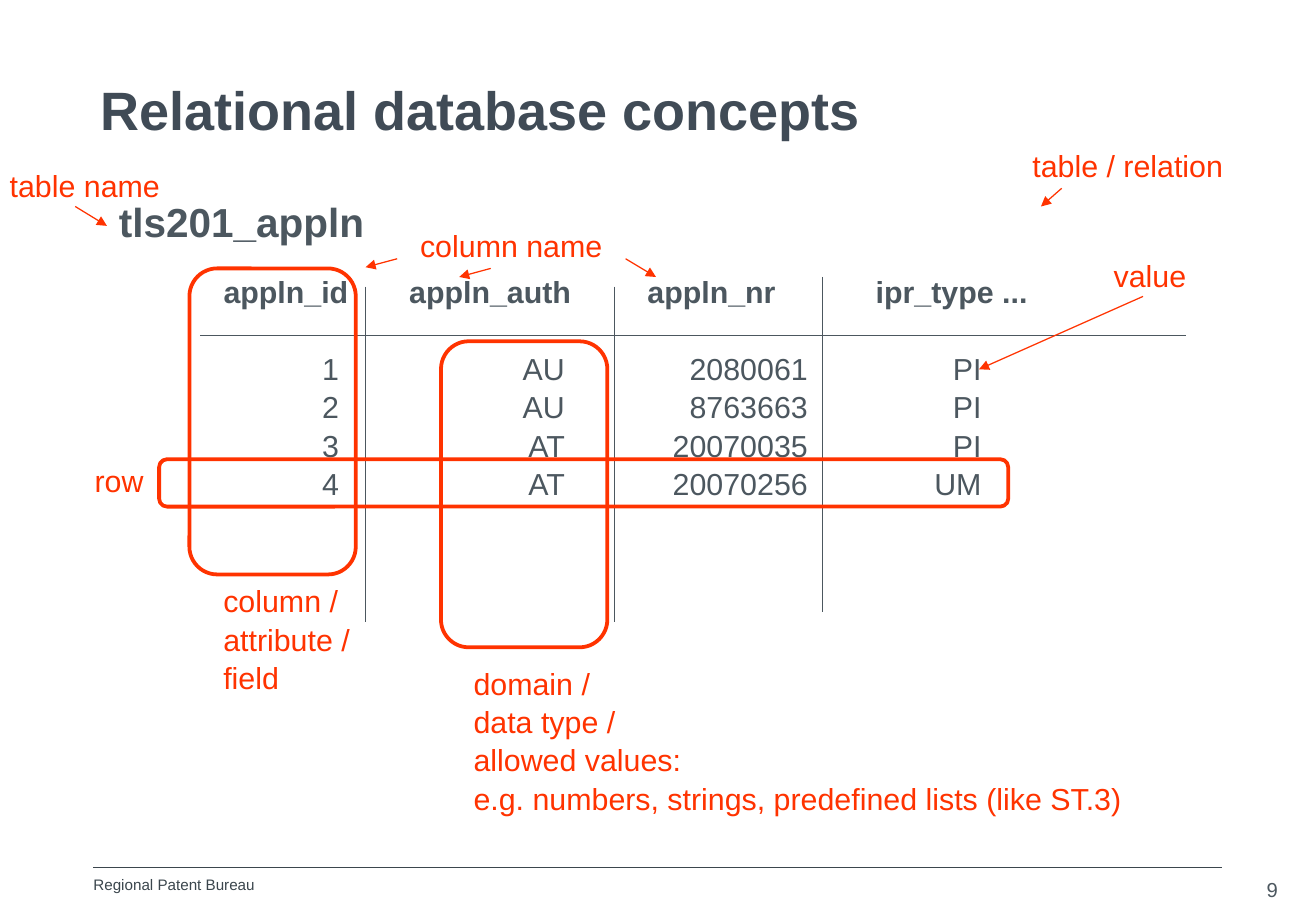
import pptx
import pptx.util
import pptx.dml.color
import pptx.enum.shapes
import pptx.enum.text
import pptx.oxml.ns
import lxml.etree

Pt = pptx.util.Pt
ALIGN = pptx.enum.text.PP_ALIGN
ANCHOR = pptx.enum.text.MSO_ANCHOR
FONT = "Arial"
TITLE_COLOR = pptx.dml.color.RGBColor(0x40, 0x4B, 0x56)
FOOTER_COLOR = pptx.dml.color.RGBColor(0x3B, 0x46, 0x4D)
TABLE_COLOR = pptx.dml.color.RGBColor(0x4C, 0x57, 0x5F)
MARK_COLOR = pptx.dml.color.RGBColor(0xFF, 0x33, 0x00)

HEADERS = ["appln_id", "appln_auth", "appln_nr", "ipr_type ..."]
RECORDS = [
    ["1", "AU", "2080061", "PI"],
    ["2", "AU", "8763663", "PI"],
    ["3", "AT", "20070035", "PI"],
    ["4", "AT", "20070256", "UM"],
]
COLUMN_EDGES = [118.8, 216.7, 364.3, 487.4, 702.7]
HEADER_LEFTS = [132.5, 242.6, 383.8, 519.1]
VALUE_RIGHTS = [200.9, 334.8, 478.8, 581.8]
TABLE_TOP = 159.1
HEADER_HEIGHT = 48.3
ROW_HEIGHT = 22.8
RULE_Y = 198.7
COLUMN_RULE_TOPS = [169.9, 169.9, 164.2]
COLUMN_RULE_LENGTH = 198.7


def style_text(frame, size, color, bold=False, align=ALIGN.LEFT, spacing=1.05):
    for paragraph in frame.paragraphs:
        paragraph.alignment = align
        paragraph.line_spacing = spacing
        for run in paragraph.runs:
            run.font.name = FONT
            run.font.size = Pt(size)
            run.font.bold = bold
            run.font.color.rgb = color


def add_text(slide, text, left, top, width, height, size=18, color=MARK_COLOR,
             bold=False, align=ALIGN.LEFT, anchor=ANCHOR.TOP, spacing=1.05, inset=None):
    box = slide.shapes.add_textbox(Pt(left), Pt(top), Pt(width), Pt(height))
    frame = box.text_frame
    frame.word_wrap = False
    frame.vertical_anchor = anchor
    if inset is not None:
        frame.margin_left = frame.margin_right = Pt(inset)
        frame.margin_top = frame.margin_bottom = Pt(inset)
    frame.text = text
    style_text(frame, size, color, bold, align, spacing)


def add_rule(slide, x1, y1, x2, y2, color=TABLE_COLOR):
    rule = slide.shapes.add_connector(
        pptx.enum.shapes.MSO_CONNECTOR.STRAIGHT, Pt(x1), Pt(y1), Pt(x2), Pt(y2))
    rule.line.color.rgb = color
    rule.line.width = Pt(0.75)
    lxml.etree.SubElement(rule._element.spPr, pptx.oxml.ns.qn("a:effectLst"))
    return rule


def add_arrow(slide, x1, y1, x2, y2):
    arrow = add_rule(slide, x1, y1, x2, y2, MARK_COLOR)
    lxml.etree.SubElement(
        arrow.line._get_or_add_ln(), pptx.oxml.ns.qn("a:tailEnd"), type="triangle")


def add_outline(slide, left, top, width, height):
    outline = slide.shapes.add_shape(
        pptx.enum.shapes.MSO_SHAPE.ROUNDED_RECTANGLE,
        Pt(left), Pt(top), Pt(width), Pt(height))
    outline.shadow.inherit = False
    outline.fill.background()
    outline.line.color.rgb = MARK_COLOR
    outline.line.width = Pt(2.25)


def fill_cell(cell, text, left, right, top, bold, align):
    cell.fill.background()
    cell.margin_left, cell.margin_right = Pt(left), Pt(right)
    cell.margin_top, cell.margin_bottom = Pt(top), Pt(0)
    cell.text_frame.text = text
    style_text(cell.text_frame, 18, TABLE_COLOR, bold, align)


def add_relation(slide):
    left, right = COLUMN_EDGES[0], COLUMN_EDGES[-1]
    height = HEADER_HEIGHT + ROW_HEIGHT * len(RECORDS)
    table = slide.shapes.add_table(
        len(RECORDS) + 1, len(HEADERS),
        Pt(left), Pt(TABLE_TOP), Pt(right - left), Pt(height)).table
    table.first_row = table.horz_banding = False
    for index, row in enumerate(table.rows):
        row.height = Pt(ROW_HEIGHT if index else HEADER_HEIGHT)
    for column, header in enumerate(HEADERS):
        start, end = COLUMN_EDGES[column:column + 2]
        table.columns[column].width = Pt(end - start)
        fill_cell(table.cell(0, column), header,
                  HEADER_LEFTS[column] - start, 0, 3.6, True, ALIGN.LEFT)
        for row, record in enumerate(RECORDS, 1):
            cell = table.cell(row, column)
            fill_cell(cell, record[column],
                      0, end - VALUE_RIGHTS[column], 0, False, ALIGN.RIGHT)
            cell.vertical_anchor = ANCHOR.MIDDLE
    add_rule(slide, left, RULE_Y, right, RULE_Y)
    for x, top in zip(COLUMN_EDGES[1:-1], COLUMN_RULE_TOPS):
        add_rule(slide, x, top, x, top + COLUMN_RULE_LENGTH)


def add_annotations(slide):
    for outline in [(112.3, 159.1, 98.6, 181.4),
                    (94.3, 272.2, 503.3, 28.1),
                    (261.4, 202.3, 98.6, 181.4)]:
        add_outline(slide, *outline)
    for label in [
        ("column name", 241.9, 130.3, 123.8, 28.8),
        ("table name", -1.4, 94.3, 104.4, 28.8),
        ("value", 653, 147.6, 59, 28.8),
        ("table / relation", 604.8, 82.8, 128.9, 28.8),
        ("row", 49, 269.3, 44.6, 28.8),
        ("column /\nattribute /\nfield", 125.3, 340.6, 91.4, 72.7),
        ("domain /\ndata type /\nallowed values:\n"
         "e.g. numbers, strings, predefined lists (like ST.3)",
         273.6, 389.5, 407.5, 94.3),
    ]:
        add_text(slide, *label)
    for arrow in [(235.4, 153.4, 216.7, 158.4),
                  (290.9, 159.1, 272.2, 164.2),
                  (370.8, 153.4, 388.8, 164.2),
                  (44.6, 122.4, 63.4, 133.9),
                  (677.5, 175.7, 580.3, 218.9),
                  (629.3, 111.6, 617, 122.4)]:
        add_arrow(slide, *arrow)


def add_footer(slide):
    add_rule(slide, 55.4, 514.1, 724.3, 514.1, FOOTER_COLOR)
    add_text(slide, "Regional Patent Bureau", 55.4, 519.1, 132.5, 18,
             size=9, color=FOOTER_COLOR, spacing=1, inset=0)
    add_text(slide, "9", 721.4, 518.4, 43.2, 17.3, size=12, color=TABLE_COLOR,
             align=ALIGN.RIGHT, anchor=ANCHOR.MIDDLE, spacing=1)


def main():
    deck = pptx.Presentation()
    deck.slide_width, deck.slide_height = Pt(780), Pt(540)
    slide = deck.slides.add_slide(deck.slide_layouts[6])
    add_footer(slide)
    add_text(slide, "Relational database concepts", 52.6, 39.4, 655.9, 50.4,
             size=32, color=TITLE_COLOR, bold=True, anchor=ANCHOR.MIDDLE, spacing=1)
    add_text(slide, "tls201_appln", 63.4, 111.6, 161.3, 36,
             size=24, color=TABLE_COLOR, bold=True)
    add_relation(slide)
    add_annotations(slide)
    deck.save("out.pptx")


if __name__ == "__main__":
    main()
